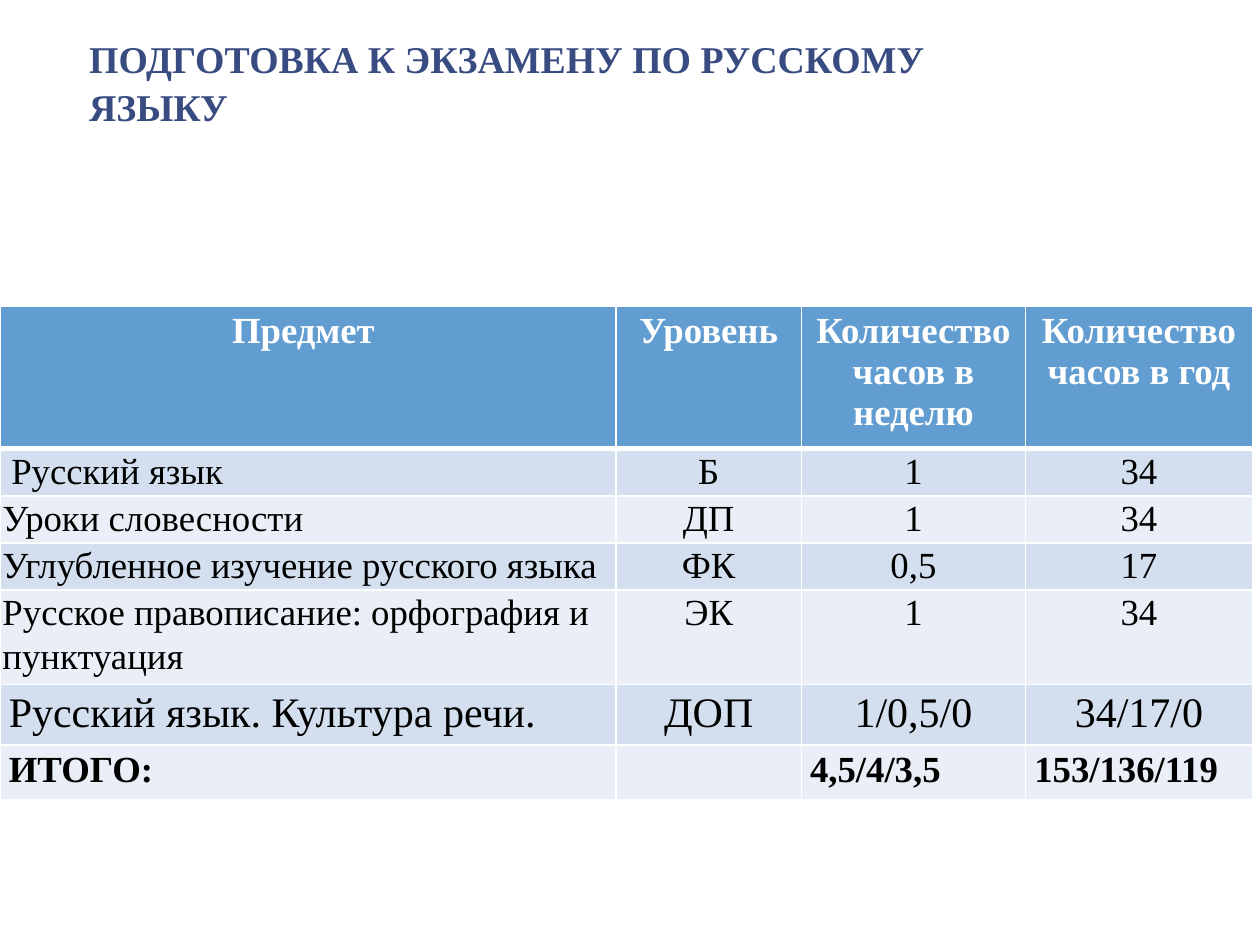
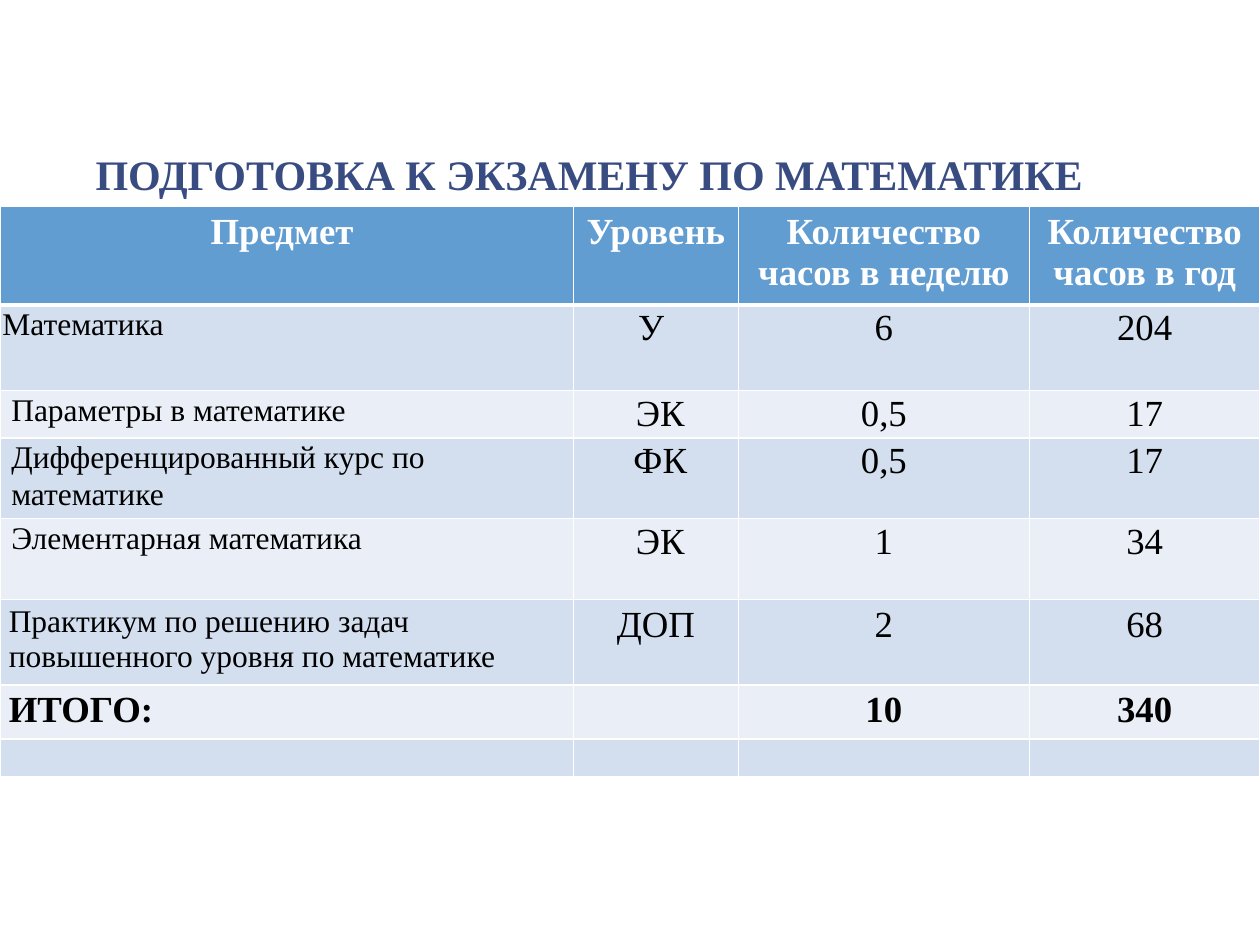
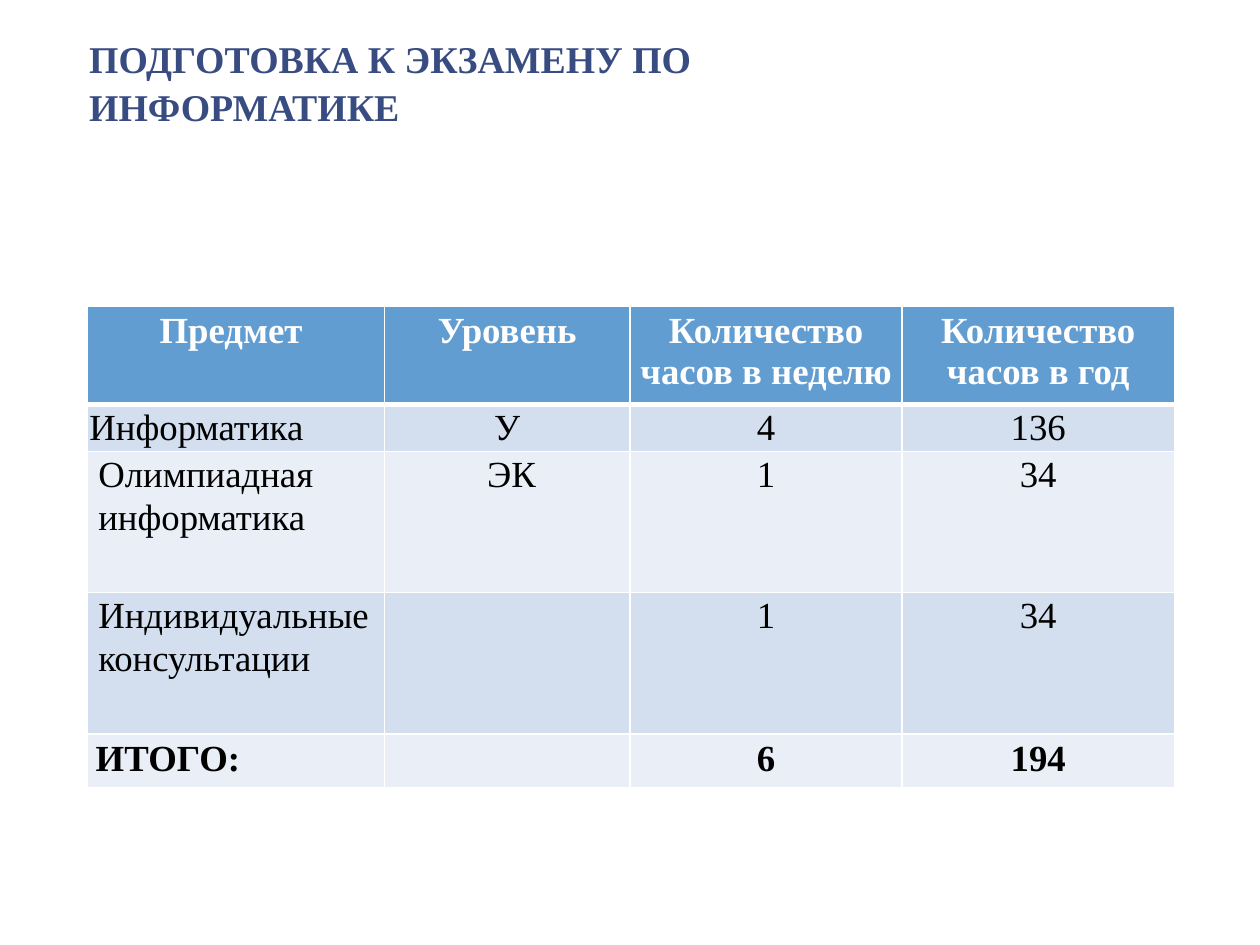
import dataclasses

import pptx
import pptx.dml.color
import pptx.enum.text
import pptx.oxml
import pptx.oxml.ns
import pptx.util

TITLE_BLUE = pptx.dml.color.RGBColor(0x38, 0x4C, 0x81)
HEADER_BLUE = pptx.dml.color.RGBColor(0x62, 0x9D, 0xD1)
BAND_DARK = pptx.dml.color.RGBColor(0xD3, 0xDF, 0xEE)
BAND_LIGHT = pptx.dml.color.RGBColor(0xEA, 0xEF, 0xF7)
WHITE = pptx.dml.color.RGBColor(0xFF, 0xFF, 0xFF)
BLACK = pptx.dml.color.RGBColor(0, 0, 0)

FONT = "Times New Roman"
LEFT = pptx.enum.text.PP_ALIGN.LEFT
CENTER = pptx.enum.text.PP_ALIGN.CENTER

# The slide is a grid of 100 columns by 75 rows with square cells.
SLIDE_WIDTH = pptx.util.Inches(10)
SLIDE_HEIGHT = pptx.util.Inches(7.5)
UNIT = SLIDE_WIDTH / 100

TOP_TITLE_BOX = (6.1, 3, 74.4, 6.9)
HEADINGS = ("Предмет ", "Уровень", "Количество часов в неделю", "Количество часов в год")


@dataclasses.dataclass
class Row:
    """One table row; roomy rows have wide margins and single line spacing."""
    height: float
    texts: tuple
    size: float = 21
    subject_size: float = 21
    indents: tuple = (0, 0, 0, 0)
    roomy: bool = False
    bold: bool = False
    number_align: int = CENTER
    color: pptx.dml.color.RGBColor = BLACK


def grid(units):
    return round(units * UNIT)


def write(frame, text, *, size, color, bold=False, align=LEFT, spacing=None, indent=0):
    para = frame.paragraphs[0]
    if indent:
        para._p.get_or_add_pPr().set("marL", str(grid(indent)))
    para.alignment = align
    if spacing:
        para.line_spacing = spacing
    span = para.add_run()
    span.text = text
    span.font.name = FONT
    span.font.size = pptx.util.Pt(size)
    span.font.bold = bold
    span.font.color.rgb = color


def add_title(page, text, box, size):
    frame = page.shapes.add_textbox(*map(grid, box)).text_frame
    frame.word_wrap = True
    frame.vertical_anchor = pptx.enum.text.MSO_ANCHOR.MIDDLE
    write(frame, text, size=size, color=TITLE_BLUE, bold=True, spacing=1.06)


def set_borders(cell, widths):
    """Draw white borders; widths maps L, R, T and B to points."""
    properties = cell._tc.get_or_add_tcPr()
    for side, width in widths.items():
        properties.append(pptx.oxml.parse_xml(
            f'<a:ln{side} {pptx.oxml.ns.nsdecls("a")} w="{pptx.util.Pt(width)}">'
            f'<a:solidFill><a:srgbClr val="{WHITE}"/></a:solidFill></a:ln{side}>'))


def fill_cell(cell, row, column, fill, borders):
    set_borders(cell, borders)
    cell.fill.solid()
    cell.fill.fore_color.rgb = fill
    text = row.texts[column]
    spacious = row.roomy and text
    cell.margin_left = cell.margin_right = grid(0.7 if spacious else 0.2)
    cell.margin_top = cell.margin_bottom = grid(0.4 if spacious else 0)
    if text:
        is_header = row.color == WHITE
        aligns = (CENTER if is_header else LEFT, CENTER, row.number_align, row.number_align)
        write(cell.text_frame, text, size=row.size if column else row.subject_size,
              color=row.color, bold=row.bold, align=aligns[column],
              spacing=None if row.roomy else 1.07, indent=row.indents[column])


def add_hours_table(page, left, top, widths, header_height, body):
    rows = [Row(header_height, HEADINGS, roomy=True, bold=True, color=WHITE), *body]
    table = page.shapes.add_table(
        len(rows), len(widths), grid(left), grid(top),
        grid(sum(widths)), grid(sum(row.height for row in rows))).table
    table.first_row = table.horz_banding = False
    for column, width in enumerate(widths):
        table.columns[column].width = grid(width)
    for number, row in enumerate(rows):
        table.rows[number].height = grid(row.height)
        fill = (BAND_DARK if number % 2 else BAND_LIGHT) if number else HEADER_BLUE
        borders = {"L": 1, "R": 1, "T": 3 if number == 1 else 1, "B": 1 if number else 3}
        for column in range(len(widths)):
            fill_cell(table.cell(number, column), row, column, fill, borders)


def add_exam_slide(deck, title, title_box, title_size, **table):
    page = deck.slides.add_slide(deck.slide_layouts[6])
    add_title(page, title, title_box, title_size)
    add_hours_table(page, **table)


def main():
    deck = pptx.Presentation()
    deck.slide_width = SLIDE_WIDTH
    deck.slide_height = SLIDE_HEIGHT
    subject_indent = (0.7, 0, 0, 0)
    both_indent = (0.7, 0.7, 0, 0)

    add_exam_slide(
        deck, "ПОДГОТОВКА К ЭКЗАМЕНУ ПО РУССКОМУ ЯЗЫКУ", TOP_TITLE_BOX, 21.6,
        left=0, top=24.3, widths=(48.9, 14.7, 17.8, 18), header_height=11.2,
        body=[
            Row(3.7, ("Русский язык", "Б", "1", "34"), indents=subject_indent),
            Row(3.7, ("Уроки словесности", "ДП", "1", "34")),
            Row(3.7, ("Углубленное изучение русского языка", "ФК", "0,5", "17")),
            Row(7.5, ("Русское правописание: орфография и пунктуация", "ЭК", "1", "34")),
            Row(4.7, ("Русский язык. Культура речи.", "ДОП", "1/0,5/0", "34/17/0"),
                size=24, subject_size=24, roomy=True),
            Row(4.2, ("ИТОГО:", "", "4,5/4/3,5", "153/136/119"),
                roomy=True, bold=True, number_align=LEFT),
        ])

    add_exam_slide(
        deck, "ПОДГОТОВКА К ЭКЗАМЕНУ ПО МАТЕМАТИКЕ", (6.6, 9.4, 86.2, 8.5), 24,
        left=0, top=16.4, widths=(45.5, 13.1, 23.1, 18.3), header_height=7.8,
        body=[
            Row(6.8, ("Математика", "У ", "6", "204"), subject_size=18),
            Row(3.7, ("Параметры в математике", "ЭК", "0,5", "17"),
                subject_size=18, indents=both_indent),
            Row(6.4, ("Дифференцированный курс по математике", "ФК", "0,5", "17"),
                subject_size=18, indents=both_indent),
            Row(6.4, ("Элементарная математика", "ЭК", "1", "34"),
                subject_size=18, indents=both_indent),
            Row(6.8, ("Практикум по решению задач повышенного уровня по математике",
                      "ДОП", "2", "68"), subject_size=18, roomy=True),
            Row(4.2, ("ИТОГО:", "", "10", "340"), roomy=True, bold=True),
            Row(3, ("", "", "", "")),
        ])

    add_exam_slide(
        deck, "ПОДГОТОВКА К ЭКЗАМЕНУ ПО ИНФОРМАТИКЕ", TOP_TITLE_BOX, 21.6,
        left=6.9, top=24.3, widths=(23.6, 19.5, 21.6, 21.6), header_height=7.8,
        body=[
            Row(3.7, ("Информатика", "У", "4", "136")),
            Row(11.2, ("Олимпиадная информатика", "ЭК", "1", "34"), indents=both_indent),
            Row(11.2, ("Индивидуальные консультации", "", "1", "34"), indents=subject_indent),
            Row(4.2, ("ИТОГО:", "", "6", "194"), roomy=True, bold=True),
        ])

    deck.save("out.pptx")


if __name__ == "__main__":
    main()
